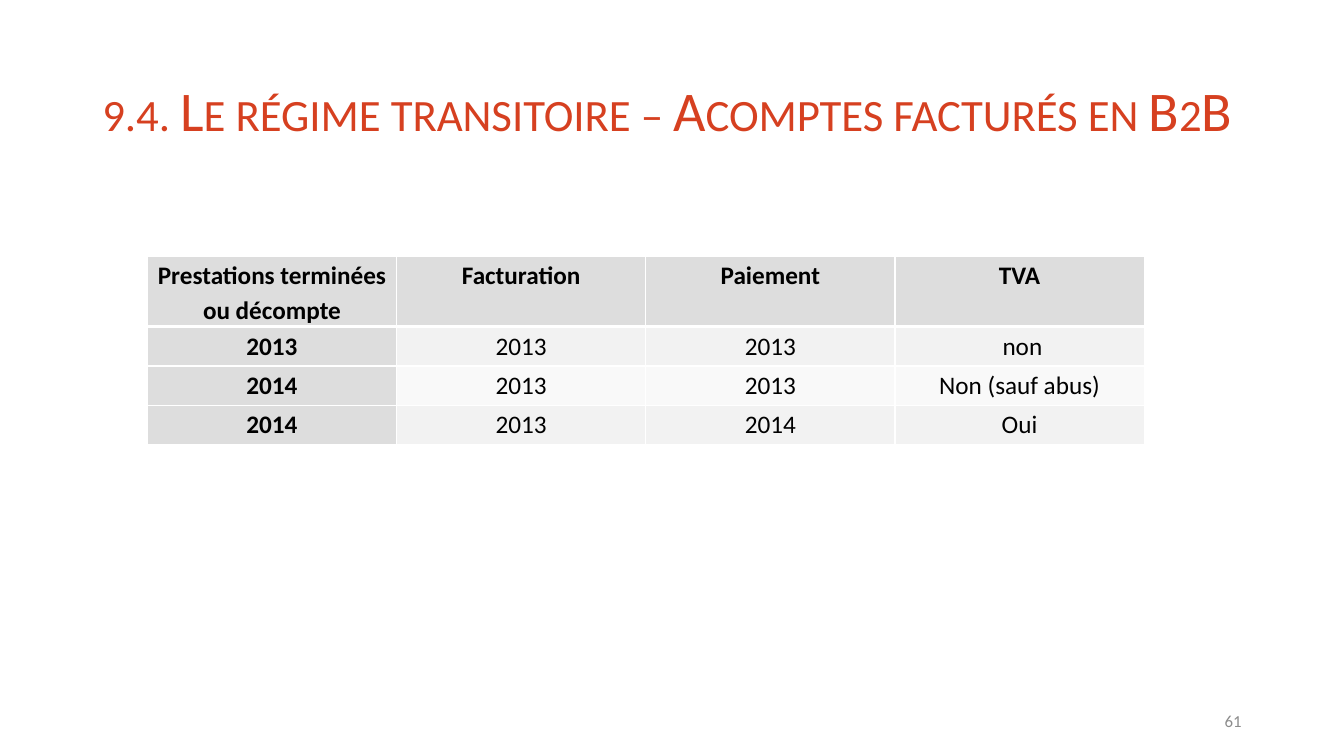
from dataclasses import dataclass

from lxml import etree
from pptx import Presentation
from pptx import util as u
from pptx.dml.color import RGBColor
from pptx.enum import text
from pptx.oxml.ns import qn


@dataclass(frozen=True)
class Theme:
    font: str = "Calibri"
    title: str = "D64020"
    ink: str = "000000"
    muted: str = "8C8C8C"
    head: str = "DDDDDD"
    bands: tuple = ("F2F2F2", "F9F9F9")
    rule: str = "FFFFFF"
    title_size: int = 40
    table_size: int = 18
    number_size: int = 12


class Deck:
    def __init__(self, prs, theme):
        self.theme = theme
        self.s = prs.slides.add_slide(prs.slide_layouts[6])

    def style(self, p, size, color, align, spacing=1.0, bold=False):
        p.alignment = align
        p.line_spacing = spacing
        for r in p.runs:
            r.font.name = self.theme.font
            r.font.size = u.Pt(size)
            r.font.bold = bold
            r.font.color.rgb = RGBColor.from_string(color)

    def label(self, box, words, size, color, align, spacing=1.0):
        sp = self.s.shapes.add_textbox(*map(u.Pt, box))
        tf = sp.text_frame
        tf.word_wrap = True
        tf.vertical_anchor = text.MSO_ANCHOR.MIDDLE
        tf.text = words
        self.style(tf.paragraphs[0], size, color, align, spacing)
        return tf.paragraphs[0]

    def title(self, box, words):
        p = self.label(box, words, self.theme.title_size, self.theme.title,
                       text.PP_ALIGN.LEFT, 0.9)
        for r in p.runs:
            r.font._element.set("cap", "small")

    def number(self, box, words):
        self.label(box, words, self.theme.number_size, self.theme.muted,
                   text.PP_ALIGN.RIGHT)

    def borders(self, cell, widths):
        # Border lines come before the fill in the cell properties
        tcPr = cell._tc.get_or_add_tcPr()
        for i, (side, width) in enumerate(widths.items()):
            ln = etree.Element(qn(f"a:ln{side}"), w=str(u.Pt(width)))
            fill = etree.SubElement(ln, qn("a:solidFill"))
            etree.SubElement(fill, qn("a:srgbClr"), val=self.theme.rule)
            tcPr.insert(i, ln)

    def table(self, box, rows, heights):
        th = self.theme
        frame = self.s.shapes.add_table(len(rows), len(rows[0]), *map(u.Pt, box))
        tbl = frame.table
        for row, height in zip(tbl.rows, heights):
            row.height = u.Pt(height)
        for i, row in enumerate(rows):
            for j, words in enumerate(row):
                cell = tbl.cell(i, j)
                is_head = i == 0 or j == 0
                cell.margin_left = cell.margin_right = u.Pt(5)
                cell.margin_top = cell.margin_bottom = 0
                cell.text = words
                self.style(cell.text_frame.paragraphs[0], th.table_size, th.ink,
                           text.PP_ALIGN.CENTER, 1.15, is_head)
                cell.fill.solid()
                color = th.head if is_head else th.bands[(i - 1) % 2]
                cell.fill.fore_color.rgb = RGBColor.from_string(color)
                self.borders(cell, {"L": 1, "R": 1, "T": 3 if i == 1 else 1,
                                    "B": 3 if i == 0 else 1})


def main():
    prs = Presentation()
    prs.slide_width, prs.slide_height = u.Pt(960), u.Pt(540)
    deck = Deck(prs, Theme())

    # Heading
    deck.title((66, 28.8, 828, 104.4),
               "9.4. Le régime transitoire – Acomptes facturés en B2B")

    # VAT rules by year
    rows = [
        ("Prestations terminées ou décompte", "Facturation", "Paiement", "TVA"),
        ("2013", "2013", "2013", " non"),
        ("2014", "2013", "2013", "Non (sauf abus)"),
        ("2014", "2013", "2014", "Oui"),
    ]
    heights = [50.4] + [28.2] * 3
    deck.table((105.3, 182.8, 712, sum(heights)), rows, heights)

    # Slide number
    deck.number((678, 500.5, 216, 28.8), "61")

    prs.save("out.pptx")


if __name__ == "__main__":
    main()
